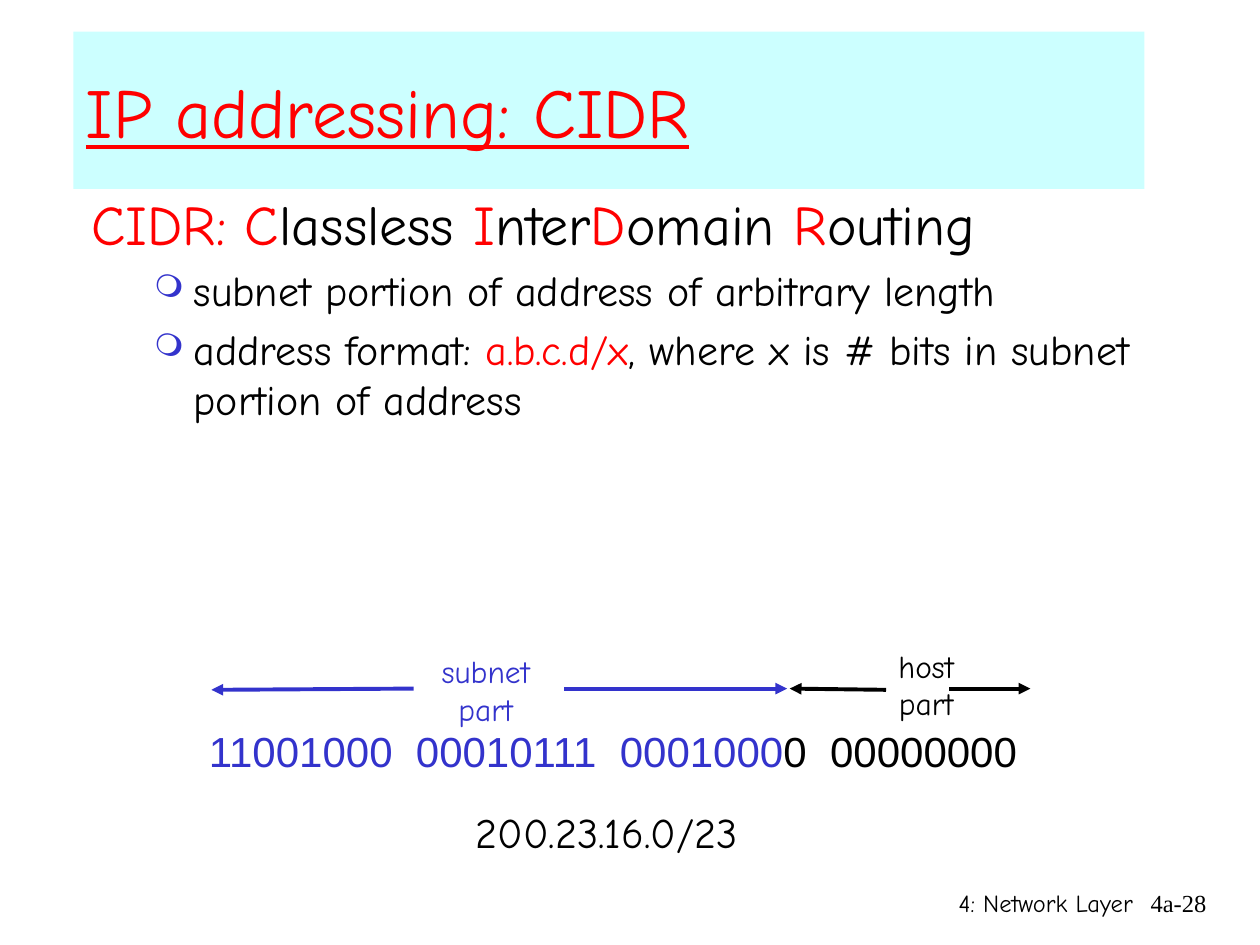
from pptx import Presentation
from pptx.dml.color import RGBColor
from pptx.enum import shapes, text
from pptx.oxml import parse_xml
from pptx.oxml import ns
from pptx.util import Pt

COLORS = {"black": "000000", "red": "FF0000", "blue": "3333CC", "band": "CCFFFF"}
COMIC, SERIF, SANS = "Comic Neue", "Times New Roman", "Arial"
ALIGN = text.PP_ALIGN


def rgb(color):
    """Return the named colour."""
    return RGBColor.from_string(COLORS[color])


def add_runs(paragraph, runs, size, font=COMIC):
    """Add (wording, colour) runs to a paragraph."""
    for wording, color in runs:
        run = paragraph.add_run()
        run.text = wording
        run.font.size = Pt(size)
        run.font.name = font
        run.font.color.rgb = rgb(color)


def add_label(slide, box, lines, size, font=COMIC, align=ALIGN.LEFT, wrap=False):
    """Add a text box with one paragraph for each list of runs."""
    frame = slide.shapes.add_textbox(*map(Pt, box)).text_frame
    frame.word_wrap = wrap
    for i, runs in enumerate(lines):
        paragraph = frame.paragraphs[0] if i == 0 else frame.add_paragraph()
        paragraph.alignment = align
        add_runs(paragraph, runs, size, font)
    return frame


def add_arrow(slide, start, end, color):
    """Add a line with an arrowhead at its end."""
    arrow = slide.shapes.add_connector(
        shapes.MSO_CONNECTOR.STRAIGHT, *map(Pt, (*start, *end)))
    arrow.line.width = Pt(2.25)
    arrow.line.color.rgb = rgb(color)
    arrow.line._get_or_add_ln().append(
        parse_xml(f'<a:tailEnd {ns.nsdecls("a")} type="triangle"/>'))
    arrow._element.spPr.append(parse_xml(f'<a:effectLst {ns.nsdecls("a")}/>'))


def add_title(slide, box):
    """Add the underlined heading on its band."""
    band = slide.shapes.add_shape(shapes.MSO_SHAPE.RECTANGLE, *map(Pt, box))
    band.shadow.inherit = False
    band.fill.solid()
    band.fill.fore_color.rgb = rgb("band")
    band.line.fill.background()
    band.text_frame.vertical_anchor = text.MSO_ANCHOR.MIDDLE
    heading = band.text_frame.paragraphs[0]
    heading.alignment = ALIGN.LEFT
    add_runs(heading, [("IP addressing: CIDR", "red")], 40)
    heading.runs[0].font.underline = True


def add_definition(slide, box):
    """Add the expanded acronym and its bulleted points."""
    acronym = [("CIDR: C", "red"), ("lassless ", "black"), ("I", "red"),
               ("nter", "black"), ("D", "red"), ("omain ", "black"),
               ("R", "red"), ("outing", "black")]
    points = [
        [("subnet portion of address of arbitrary length", "black")],
        [("address format: ", "black"), ("a.b.c.d/x", "red"),
         (", where x is # bits in subnet portion of address", "black")],
    ]
    frame = add_label(slide, box, [acronym], 32, wrap=True)
    frame.paragraphs[0].space_before = Pt(6.4)
    for point in points:
        paragraph = frame.add_paragraph()
        paragraph.level = 1
        paragraph.space_before = Pt(4.8)
        add_runs(paragraph, point, 24)
        props = paragraph._p.get_or_add_pPr()
        props.set("marL", str(Pt(58.5)))
        props.set("indent", str(Pt(-22.5)))
        for bullet in (f'<a:buClr {{}}><a:srgbClr val="{COLORS["blue"]}"/></a:buClr>',
                       '<a:buSzPct {} val="75000"/>', '<a:buChar {} char="❍"/>'):
            props.append(parse_xml(bullet.format(ns.nsdecls("a"))))


def add_address(slide, box):
    """Add the binary address with its subnet and host parts marked."""
    left, top, width, height = box
    arrow_y = top + 27.5
    for name, color, x, y, label_width in (("subnet", "blue", 129.5, 3, 71.5),
                                           ("host", "black", 391, 0, 52)):
        add_label(slide, (left + x, top + y, label_width, 50),
                  [[(name, color)], [("part", color)]], 18, align=ALIGN.CENTER)
    for color, start, end, rise in (("blue", 124, 8.5, 0.7), ("blue", 210, 337.5, 0),
                                    ("black", 394, 339, -0.7), ("black", 430, 476.5, 0)):
        add_arrow(slide, (left + start, arrow_y - min(rise, 0)),
                  (left + end, arrow_y + max(rise, 0)), color)
    add_label(slide, (left, top + 45.3, width, 36),
              [[("11001000  00010111  0001000", "blue"), ("0  00000000", "black")]],
              24, SANS)
    add_label(slide, (left + 152.5, top + height - 36, 187.5, 36),
              [[("200.23.16.0/23", "black")]], 24)


def add_footer(slide, box):
    """Add the chapter name and page number."""
    left, top, width, height = box
    add_label(slide, (left, top, 228, height), [[("4: Network Layer", "black")]],
              14, align=ALIGN.RIGHT, wrap=True)
    add_label(slide, (left + width - 53, top, 53, height), [[("4a-28", "black")]],
              14, SERIF, ALIGN.RIGHT, True)


def main():
    """Build and save the slide."""
    deck = Presentation()
    deck.slide_width, deck.slide_height = Pt(720), Pt(540)
    slide = deck.slides.add_slide(deck.slide_layouts[6])
    add_footer(slide, (426.5, 504, 270, 36))
    add_title(slide, (42, 18, 612, 90))
    add_definition(slide, (45, 104.5, 638.5, 250))
    add_address(slide, (112.3, 366, 482.5, 127.5))
    deck.save("out.pptx")


if __name__ == "__main__":
    main()
